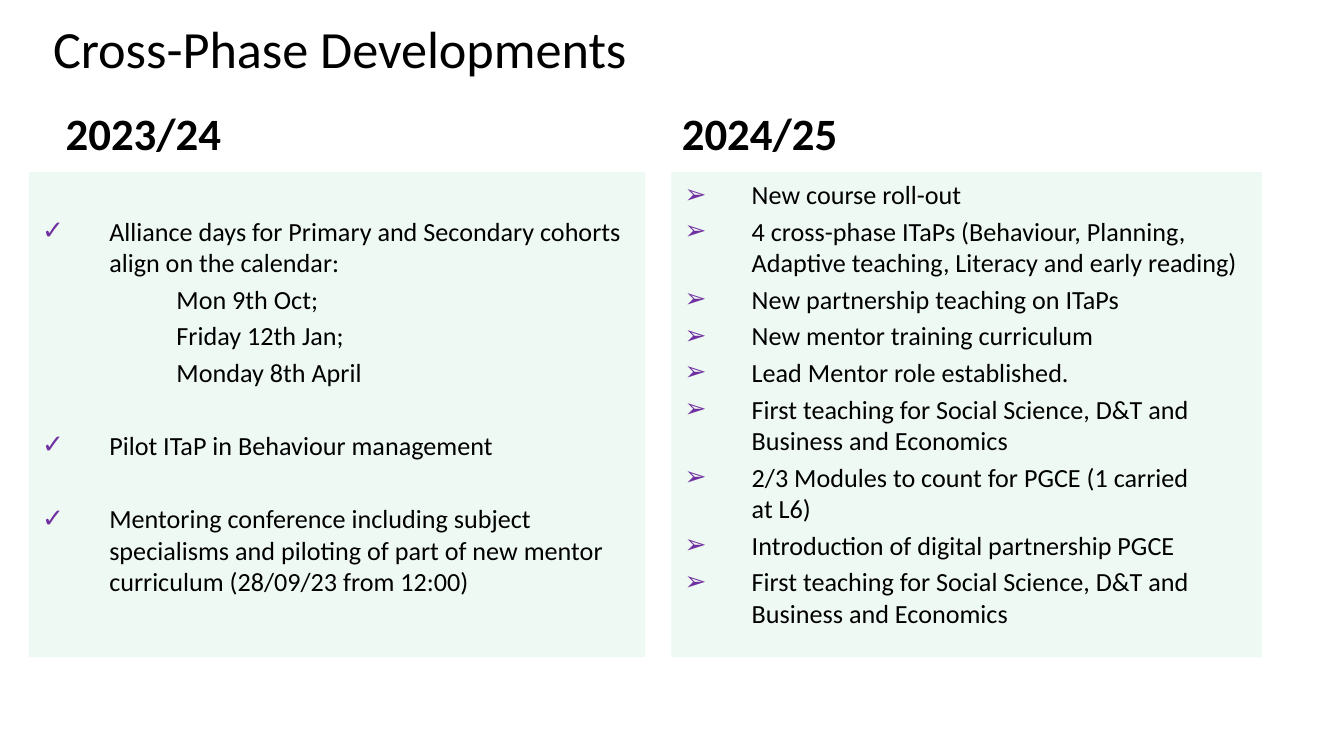
from lxml import etree
from pptx import Presentation
from pptx.dml.color import RGBColor
from pptx.enum.shapes import MSO_SHAPE
from pptx.enum.text import MSO_ANCHOR, MSO_AUTO_SIZE, PP_ALIGN
from pptx.oxml.ns import qn
from pptx.util import Pt

RECTANGLE = MSO_SHAPE.RECTANGLE
TOP, BOTTOM = MSO_ANCHOR.TOP, MSO_ANCHOR.BOTTOM
LEFT = PP_ALIGN.LEFT
NO_AUTOFIT = MSO_AUTO_SIZE.NONE

EMU_PER_PX = 4572  # 200 px to the inch
SLIDE_WIDTH, SLIDE_HEIGHT = 2000, 1125
TITLE_ONLY = 5
FONT = "Calibri"
COLORS = {"text": "000000", "panel": "EEF9F4", "bullet": "7030A0"}

HEADING_TOP, HEADING_WIDTH, HEADING_HEIGHT = 143, 884, 104
PANEL_TOP, PANEL_HEIGHT = 256, 722
INSET_X, INSET_Y = 20, 10
HANGING, DATE_INDENT = 100, 200
ITEM_GAP, SECTION_GAP = 2.8, 22.4  # points
HARD_SPACE = chr(160)  # written as ~ in the lines below

# Each line: text, style, space before in points
PLANS_2023 = [
    ("Alliance days~for Primary and Secondary cohorts align on the calendar:", "item", 0),
    ("Mon 9th Oct;", "date", ITEM_GAP),
    ("Friday 12th Jan;", "date", ITEM_GAP),
    ("Monday 8th April", "date", ITEM_GAP),
    ("Pilot ITaP in Behaviour management", "item", SECTION_GAP),
    ("Mentoring conference including subject specialisms and piloting of part of "
     "new mentor curriculum~(28/09/23 from 12:00)", "item", SECTION_GAP),
]
TOPICS_2024 = [
    "New course roll-out",
    "4 cross-phase~ITaPs~(Behaviour, Planning, Adaptive~teaching, Literacy and early reading)",
    "New partnership teaching on ITaPs",
    "New mentor training curriculum",
    "Lead Mentor role established.",
    "First teaching for~Social Science, D&T and Business and~Economics",
    "2/3~Modules to count for PGCE (1 carried at~L6)",
    "Introduction of digital partnership PGCE",
    "First teaching for~Social Science, D&T and Business~and~Economics",
]
PLANS_2024 = [(topic, "item", ITEM_GAP if i else 0) for i, topic in enumerate(TOPICS_2024)]

# Heading, heading left, panel left, panel width, top inset, bullet, lines
YEARS = [
    ("2023/24", 78, 43, 917, 64, "✓", PLANS_2023),
    ("2024/25", 995, 999, 879, INSET_Y, "➢", PLANS_2024),
]


def px(length):
    return length * EMU_PER_PX


def rgb(name):
    return RGBColor.from_string(COLORS[name])


def set_frame(frame, anchor=TOP, top_inset=INSET_Y):
    frame.word_wrap = True
    frame.auto_size = NO_AUTOFIT
    frame.vertical_anchor = anchor
    frame.margin_left = frame.margin_right = px(INSET_X)
    frame.margin_top, frame.margin_bottom = px(top_inset), px(INSET_Y)


def write_text(paragraph, text, size=14, bold=False, space_before=0,
               margin=0, indent=0, bullet=None):
    properties = paragraph._p.get_or_add_pPr()
    properties.set("marL", str(px(margin)))
    properties.set("indent", str(px(indent)))
    if bullet:
        color = etree.SubElement(properties, qn("a:buClr"))
        etree.SubElement(color, qn("a:srgbClr"), val=COLORS["bullet"])
        etree.SubElement(properties, qn("a:buFont"), typeface=FONT)
        etree.SubElement(properties, qn("a:buChar"), char=bullet)
    paragraph.alignment = LEFT
    paragraph.space_before = Pt(space_before)
    run = paragraph.add_run()
    run.text = text.replace("~", HARD_SPACE)
    run.font.name = FONT
    run.font.size = Pt(size)
    run.font.bold = bold
    run.font.color.rgb = rgb("text")


def add_title(slide, text):
    title = slide.shapes.title
    title.left, title.top, title.width, title.height = map(px, (59, 14, 1492, 114))
    set_frame(title.text_frame)
    write_text(title.text_frame.paragraphs[0], text, size=28)


def add_heading(slide, text, left):
    heading = slide.shapes.add_textbox(
        px(left), px(HEADING_TOP), px(HEADING_WIDTH), px(HEADING_HEIGHT))
    set_frame(heading.text_frame, anchor=BOTTOM)
    write_text(heading.text_frame.paragraphs[0], text, size=24, bold=True)


def add_panel(slide, left, width, top_inset, bullet, lines):
    panel = slide.shapes.add_shape(
        RECTANGLE, px(left), px(PANEL_TOP), px(width), px(PANEL_HEIGHT))
    panel.shadow.inherit = False
    panel.fill.solid()
    panel.fill.fore_color.rgb = rgb("panel")
    panel.line.fill.background()
    frame = panel.text_frame
    set_frame(frame, top_inset=top_inset)
    styles = {
        "item": {"margin": HANGING, "indent": -HANGING, "bullet": bullet},
        "date": {"margin": DATE_INDENT},
    }
    for i, (text, style, gap) in enumerate(lines):
        paragraph = frame.add_paragraph() if i else frame.paragraphs[0]
        write_text(paragraph, text, space_before=gap, **styles[style])


def main():
    presentation = Presentation()
    presentation.slide_width = px(SLIDE_WIDTH)
    presentation.slide_height = px(SLIDE_HEIGHT)
    slide = presentation.slides.add_slide(presentation.slide_layouts[TITLE_ONLY])

    add_title(slide, "Cross-Phase Developments")

    # One heading and one panel for each school year
    for year, heading_left, panel_left, width, top_inset, bullet, lines in YEARS:
        add_heading(slide, year, heading_left)
        add_panel(slide, panel_left, width, top_inset, bullet, lines)

    presentation.save("out.pptx")


if __name__ == "__main__":
    main()
